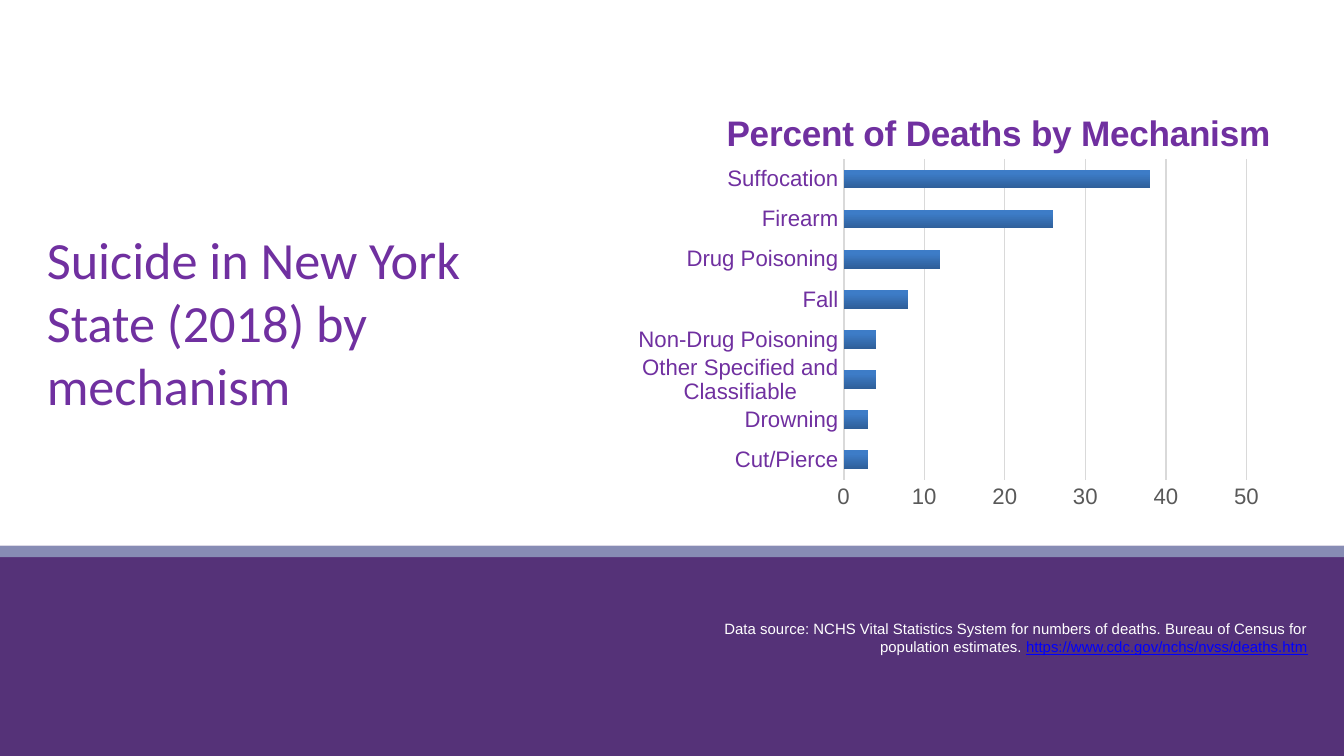
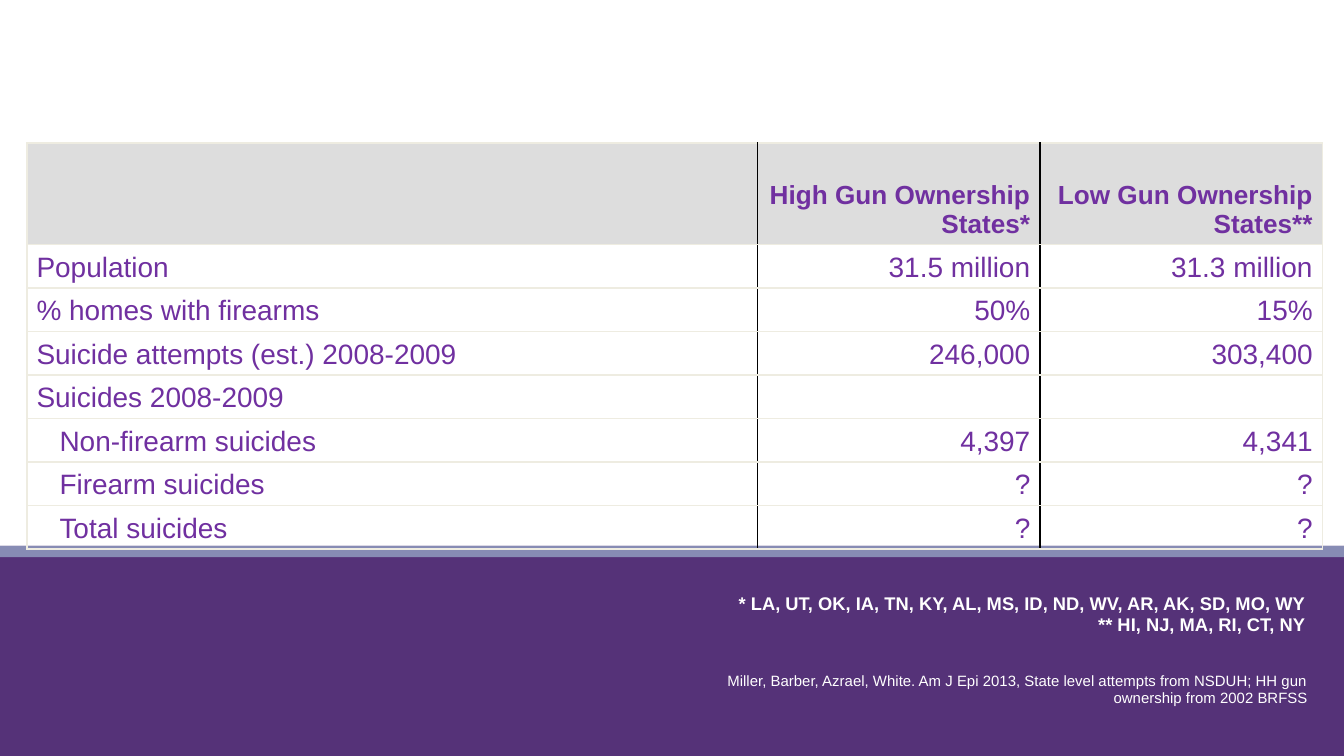
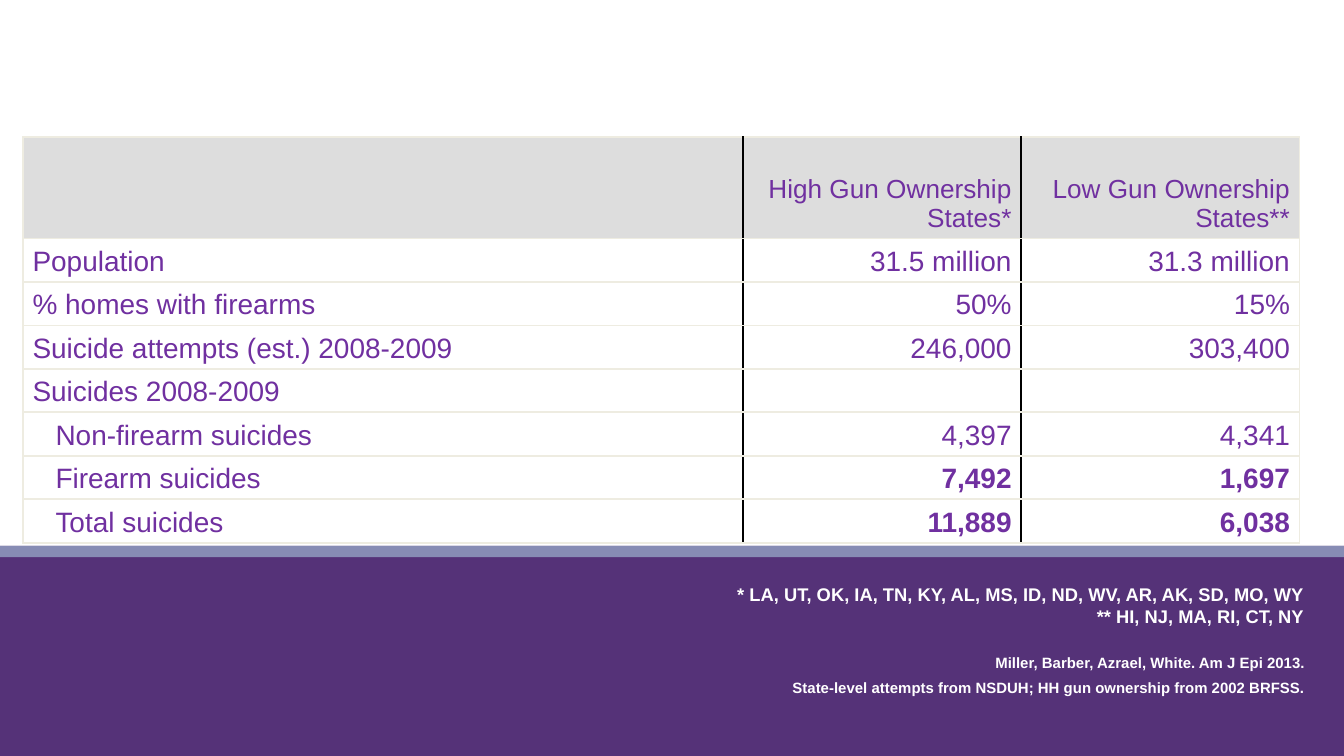
import lxml.etree
import pptx
import pptx.chart.data
import pptx.dml.color
import pptx.enum.chart
import pptx.enum.shapes
import pptx.enum.text
import pptx.oxml.ns
import pptx.util

WIDE = pptx.util.Inches(10)
HIGH = WIDE * 9 // 16
PURPLE, BAND, STRIPE = "7030A0", "553278", "878CB4"
WHITE, LINK, BLACK = "FFFFFF", "0000FF", "000000"
CREAM, HEAD, GRID, GREY = "EEECE1", "DDDDDD", "D9D9D9", "595959"
RIGHT = pptx.enum.text.PP_ALIGN.RIGHT
LEFT = pptx.enum.text.PP_ALIGN.LEFT
STATES = (
    "* LA, UT, OK, IA, TN, KY, AL, MS, ID, ND, WV, AR, AK, SD, MO, WY",
    "** HI, NJ, MA, RI, CT, NY",
)
DEATHS = {
    "Cut/Pierce": 3,
    "Drowning": 3,
    "Other Specified and Classifiable": 4,
    "Non-Drug Poisoning": 4,
    "Fall": 8,
    "Drug Poisoning": 12,
    "Firearm": 26,
    "Suffocation": 38,
}
FACTS = [
    ("", "High Gun Ownership States*", "Low Gun Ownership States**"),
    ("Population", "31.5 million", "31.3 million"),
    ("% homes with firearms", "50%", "15%"),
    ("Suicide attempts (est.) 2008-2009", "246,000", "303,400"),
    ("Suicides 2008-2009", "", ""),
    ("Non-firearm suicides", "4,397", "4,341"),
]


def tint(code):
    """Turn a hex string into a colour."""
    return pptx.dml.color.RGBColor.from_string(code)


def area(box):
    """Turn a box in percent of the slide into lengths."""
    return [round(part * side / 100) for part, side in zip(box, (WIDE, HIGH) * 2)]


def put(item, **values):
    """Set each named value on an item."""
    for name, value in values.items():
        setattr(item, name, value)


def style(font, size, color, face="Arial", **more):
    """Set the face, size and colour of a font."""
    put(font, name=face, size=pptx.util.Pt(size), **more)
    font.color.rgb = tint(color)


def tag(parent, name, **values):
    """Append an XML element with its attributes."""
    return lxml.etree.SubElement(parent, pptx.oxml.ns.qn(name), **values)


def write(slide, box, lines, size, color=WHITE, align=RIGHT, gap=0, **look):
    """Write lines, each a list of (text, changes) runs."""
    frame = slide.shapes.add_textbox(*area(box)).text_frame
    put(frame, word_wrap=True, auto_size=pptx.enum.text.MSO_AUTO_SIZE.SHAPE_TO_FIT_TEXT)
    for spot, line in enumerate(lines):
        para = frame.add_paragraph() if spot else frame.paragraphs[0]
        para.alignment = align
        if spot and gap:
            para.space_before = pptx.util.Pt(gap)
        for words, change in line:
            run = para.add_run()
            run.text = words
            style(run.font, **{"size": size, "color": color, **look, **change})


def plain(*lines):
    """Make single-run lines from strings."""
    return [[(line, {})] for line in lines]


def start(deck):
    """Add a blank slide with the bottom bands."""
    slide = deck.slides.add_slide(deck.slide_layouts[6])
    for depth, color in ((27.8, BAND), (1.5, STRIPE)):
        band = slide.shapes.add_shape(
            pptx.enum.shapes.MSO_SHAPE.RECTANGLE, *area((0, 72.2, 100, depth))
        )
        band.shadow.inherit = False
        band.fill.solid()
        band.fill.fore_color.rgb = tint(color)
        band.line.fill.background()
    return slide


def place(parent, spot, inner=False, **share):
    """Fix the layout of a chart part by percent of the chart."""
    old = parent.find(pptx.oxml.ns.qn("c:layout"))
    if old is not None:
        parent.remove(old)
    layout = tag(parent, "c:layout")
    parent.insert(spot, layout)
    manual = tag(layout, "c:manualLayout")
    if inner:
        tag(manual, "c:layoutTarget", val="inner")
    for side in ("x", "y"):
        tag(manual, f"c:{side}Mode", val="edge")
    for side, value in share.items():
        tag(manual, f"c:{side}", val=str(value / 100))


def graph(slide, box):
    """Draw the bar chart of deaths by mechanism."""
    data = pptx.chart.data.CategoryChartData()
    data.categories = list(DEATHS)
    data.add_series("Series 1", list(DEATHS.values()))
    kind = pptx.enum.chart.XL_CHART_TYPE.BAR_CLUSTERED
    chart = slide.shapes.add_chart(kind, *area(box), data).chart
    style(chart.font, 10, BLACK)
    put(chart, has_legend=False, has_title=True)
    frame = chart.chart_title.text_frame
    frame.text = "Percent of Deaths by Mechanism"
    style(frame.paragraphs[0].runs[0].font, 19, PURPLE, bold=True)
    place(frame._txBody.getparent().getparent(), 1, x=23.8, y=12.6)
    place(chart._chartSpace.chart.plotArea, 0, inner=True, x=40.9, y=23.8, w=55.8, h=65)
    none = pptx.enum.chart.XL_TICK_MARK.NONE
    cats, vals = chart.category_axis, chart.value_axis
    for axis, color in ((cats, PURPLE), (vals, GREY)):
        put(axis, major_tick_mark=none, minor_tick_mark=none)
        style(axis.tick_labels.font, 12, color)
    put(vals, minimum_scale=0, maximum_scale=50, major_unit=10)
    vals.format.line.fill.background()
    cats.has_major_gridlines = False
    for line, width in ((cats.format.line, 1), (vals.major_gridlines.format.line, 0.75)):
        line.color.rgb = tint(GRID)
        line.width = pptx.util.Pt(width)
    plot = chart.plots[0]
    put(plot, gap_width=115, overlap=-20, vary_by_categories=False)
    bars = plot.series[0]
    bars.invert_if_negative = False
    fill = bars.format.fill
    fill.gradient()
    fill.gradient_angle = 90
    for stop, (spot, color) in zip(fill.gradient_stops, ((0, "2F5F99"), (0.8, "3D7CC7"))):
        stop.position = spot
        stop.color.rgb = tint(color)


def edge(cell, **colors):
    """Draw the four borders of a cell."""
    props = cell._tc.get_or_add_tcPr()
    for side, color in colors.items():
        line = tag(props, f"a:ln{side}", w=str(pptx.util.Pt(1)))
        tag(tag(line, "a:solidFill"), "a:srgbClr", val=color)


def fill(cell, words, row, col, bold):
    """Write and format one cell of the table."""
    inset = 17.5 if row > 4 and col == 0 else 5.2
    put(
        cell,
        margin_left=pptx.util.Pt(inset),
        margin_right=pptx.util.Pt(5.2),
        margin_top=pptx.util.Pt(2.6),
        margin_bottom=pptx.util.Pt(2.6),
        vertical_anchor=pptx.enum.text.MSO_ANCHOR.BOTTOM,
    )
    edge(cell, L=BLACK if col else CREAM, R=CREAM if col == 2 else BLACK, T=CREAM, B=CREAM)
    if row:
        cell.fill.background()
    else:
        cell.fill.solid()
        cell.fill.fore_color.rgb = tint(HEAD)
    para = cell.text_frame.paragraphs[0]
    para.alignment = RIGHT if col else LEFT
    if words:
        run = para.add_run()
        run.text = words
        style(run.font, 15 if row else 14, PURPLE, bold=bold)
    else:
        tag(para._p, "a:endParaRPr", sz="1500")


def grid(slide, box, rows, strong):
    """Draw the table, with the rows in strong set bold."""
    left, top, width, height = area(box)
    table = slide.shapes.add_table(len(rows), 3, left, top, width, height).table
    put(table, first_row=False, horz_banding=False)
    for col, part in zip(table.columns, (56.4, 21.8, 21.8)):
        col.width = round(width * part / 100)
    first = height // 4
    for spot, row in enumerate(table.rows):
        row.height = (height - first) // (len(rows) - 1) if spot else first
        for col, words in enumerate(rows[spot]):
            fill(table.cell(spot, col), words, spot, col, spot in strong and col > 0)


def cause(deck):
    """Build the slide on mechanisms."""
    slide = start(deck)
    note = "Data source: NCHS Vital Statistics System for numbers of deaths. "
    note += "Bureau of Census for population estimates. "
    link = ("https://www.cdc.gov/nchs/nvss/deaths.htm", {"color": LINK, "underline": True})
    write(slide, (52.5, 81.1, 45.8, 8.9), [[(note, {}), link]], 8)
    graph(slide, (40.8, 5.5, 54.2, 65.3))
    title = plain("Suicide in New York State (2018) by mechanism")
    write(slide, (2.5, 29.2, 39.2, 26.9), title, 28, PURPLE, LEFT, face="Calibri")


def guns(deck, box, ends, strong, states, source, lines, **look):
    """Build a slide comparing states by gun ownership."""
    slide = start(deck)
    names = ("Firearm suicides", "Total suicides")
    rows = FACTS + [(name, *pair) for name, pair in zip(names, ends)]
    grid(slide, box, rows, strong)
    write(slide, states, plain(*STATES), 9.8, bold=True)
    write(slide, source, plain(*lines), 8, **look)


def main():
    """Build and save the deck."""
    deck = pptx.Presentation()
    put(deck, slide_width=WIDE, slide_height=HIGH)
    cause(deck)
    guns(
        deck,
        (2, 18.9, 96.4, 53.7),
        [("?", "?"), ("?", "?")],
        (0,),
        (44.2, 77.4, 53.9, 7.7),
        (52, 87.9, 46.3, 6.6),
        [
            "Miller, Barber, Azrael, White. Am J Epi 2013, "
            "State level attempts from NSDUH; HH gun ownership from 2002 BRFSS"
        ],
    )
    guns(
        deck,
        (1.7, 18.1, 95, 53.7),
        [("7,492", "1,697"), ("11,889", "6,038")],
        (6, 7),
        (40.8, 76.3, 57.2, 7.7),
        (44.2, 85.6, 53.9, 7.8),
        [
            "Miller, Barber, Azrael, White. Am J Epi 2013.",
            "State-level attempts from NSDUH; HH gun ownership from 2002 BRFSS.",
        ],
        gap=4,
        bold=True,
    )
    deck.save("out.pptx")


if __name__ == "__main__":
    main()
